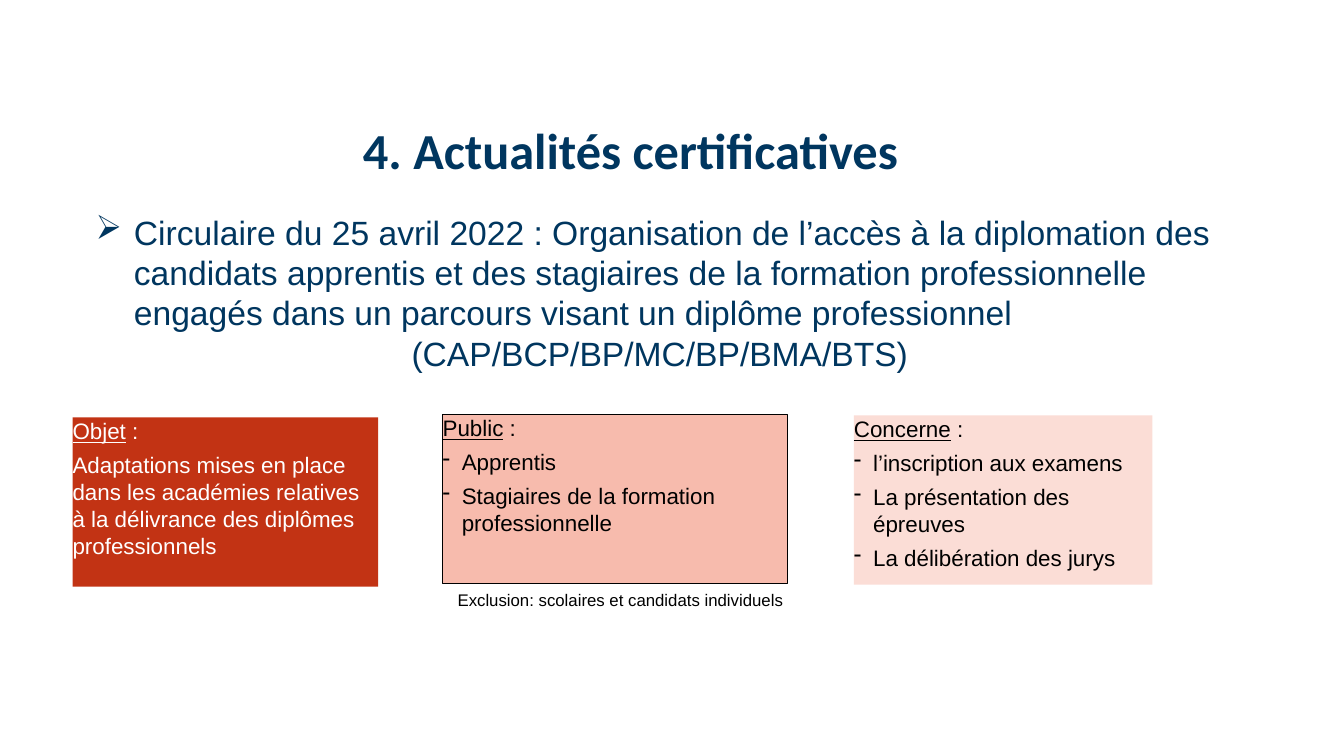
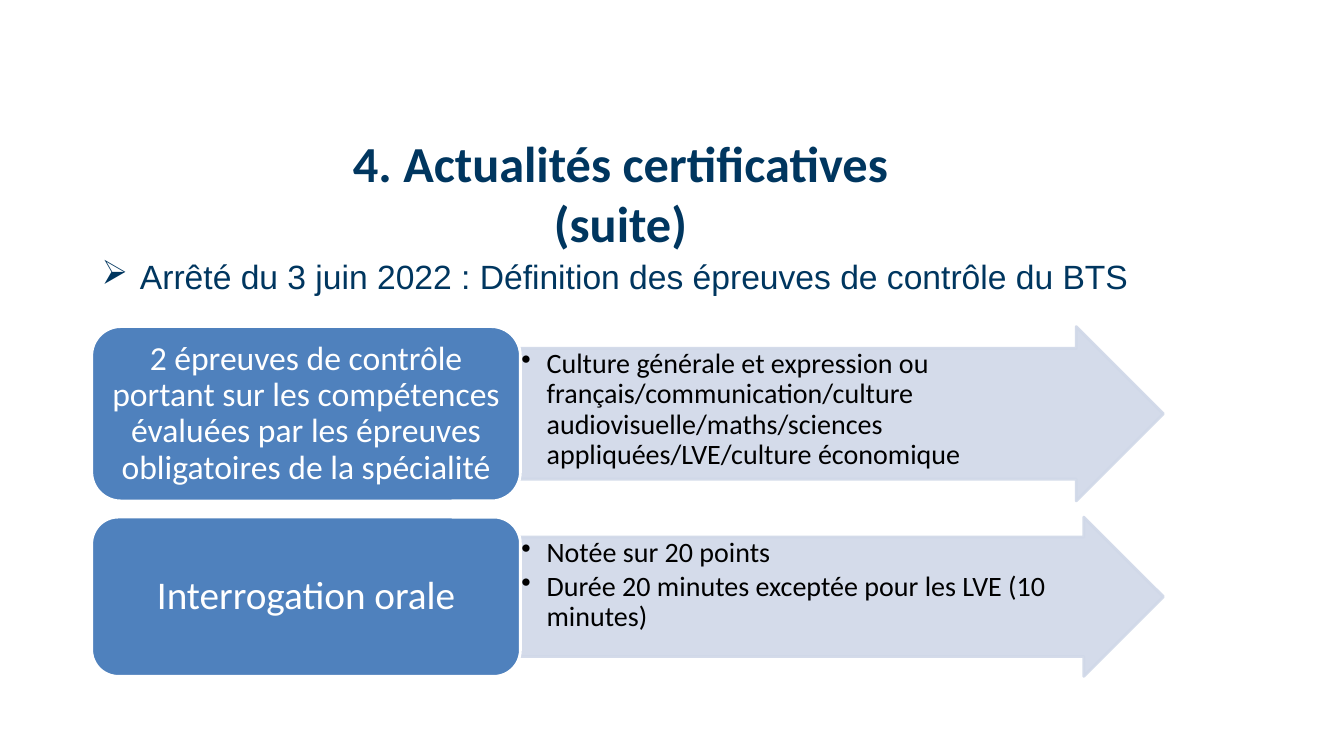
import pptx
import pptx.dml.color
import pptx.enum.shapes
import pptx.enum.text
import pptx.oxml.ns
import pptx.util
from lxml import etree

Inches = pptx.util.Inches
Pt = pptx.util.Pt
RGBColor = pptx.dml.color.RGBColor
SHAPE = pptx.enum.shapes.MSO_SHAPE
ALIGN = pptx.enum.text.PP_ALIGN
ANCHOR = pptx.enum.text.MSO_ANCHOR
qn = pptx.oxml.ns.qn

NAVY = RGBColor(0x00, 0x36, 0x5F)
BLACK = RGBColor(0x00, 0x00, 0x00)
WHITE = RGBColor(0xFF, 0xFF, 0xFF)
RED = RGBColor(0xC2, 0x33, 0x14)
SALMON = RGBColor(0xF7, 0xBB, 0xAD)
PALE_PINK = RGBColor(0xFB, 0xDD, 0xD6)
BLUE = RGBColor(0x4F, 0x81, 0xBD)
PALE_BLUE = RGBColor(0xD0, 0xD8, 0xE8)

TITLE = {"name": "Calibri", "size": Pt(36), "bold": True, "color": NAVY}
LEAD = {"name": "Arial", "size": Pt(24), "color": NAVY}
PANEL = {"name": "Arial", "size": Pt(16)}
NOTE = {"name": "Arial", "size": Pt(12), "color": BLACK}
DETAIL = {"name": "Calibri", "size": Pt(20), "color": BLACK}
HEADING = {"name": "Calibri", "color": WHITE}


def add_run(paragraph, text, style):
    run = paragraph.add_run()
    run.text = text
    for name, value in style.items():
        if name == "color":
            run.font.color.rgb = value
        else:
            setattr(run.font, name, value)


def set_bullet(paragraph, character, indent):
    properties = paragraph._p.get_or_add_pPr()
    properties.set("marL", str(Inches(indent)))
    properties.set("indent", str(-Inches(indent)))
    etree.SubElement(properties, qn("a:buChar")).set("char", character)


def write_paragraph(frame, text, style, bullet=None, **layout):
    """Fill the empty first paragraph or add one; bullet is (character, indent)."""
    first = frame.paragraphs[0]
    paragraph = frame.add_paragraph() if first.runs else first
    if bullet:
        set_bullet(paragraph, *bullet)
    for name, value in layout.items():
        setattr(paragraph, name, value)
    add_run(paragraph, text, style)
    return paragraph


def set_frame(frame, anchor=ANCHOR.TOP, insets=(0.1, 0.05)):
    horizontal, vertical = map(Inches, insets)
    settings = {
        "word_wrap": True,
        "auto_size": pptx.enum.text.MSO_AUTO_SIZE.NONE,
        "vertical_anchor": anchor,
        "margin_left": horizontal,
        "margin_right": horizontal,
        "margin_top": vertical,
        "margin_bottom": vertical,
    }
    for name, value in settings.items():
        setattr(frame, name, value)
    return frame


def add_text_box(slide, box):
    return set_frame(slide.shapes.add_textbox(*map(Inches, box)).text_frame)


def add_filled_shape(slide, kind, box, fill, line=None, line_width=2):
    shape = slide.shapes.add_shape(kind, *map(Inches, box))
    shape.shadow.inherit = False
    shape.fill.solid()
    shape.fill.fore_color.rgb = fill
    if line is None:
        shape.line.fill.background()
    else:
        shape.line.color.rgb = line
        shape.line.width = Pt(line_width)
    return shape


def add_titled_slide(presentation, title, box):
    slide = presentation.slides.add_slide(presentation.slide_layouts[5])
    placeholder = slide.shapes.title
    left, top, width, height = map(Inches, box)
    placeholder.left, placeholder.top = left, top
    placeholder.width, placeholder.height = width, height
    frame = set_frame(placeholder.text_frame)
    write_paragraph(frame, title, TITLE, alignment=ALIGN.CENTER)
    return slide


def add_lead(slide, box, text, centred_text=None):
    frame = add_text_box(slide, box)
    write_paragraph(frame, text, LEAD, ("➢", 0.38))
    if centred_text:
        write_paragraph(frame, centred_text, LEAD, alignment=ALIGN.CENTER)


def add_panel(slide, box, heading, items, fill, color, bullet=None, line=None):
    shape = add_filled_shape(slide, SHAPE.RECTANGLE, box, fill, line, 0.25)
    frame = set_frame(shape.text_frame, insets=(0, 0))
    style = {**PANEL, "color": color}
    layout = {"alignment": ALIGN.LEFT, "space_after": Pt(5)}
    paragraph = write_paragraph(frame, heading, {**style, "underline": True}, **layout)
    add_run(paragraph, " :", style)
    for item in items:
        write_paragraph(frame, item, style, bullet, **layout)


def add_arrow_row(slide, box, heading, heading_size, insets, details):
    """Rounded heading on the left 40 % of the box, arrow with details on the rest."""
    left, top, width, height = box
    split = 0.4 * width
    arrow_box = (left + split, top, width - split, height)
    arrow = add_filled_shape(slide, SHAPE.RIGHT_ARROW, arrow_box, PALE_BLUE, PALE_BLUE)
    arrow.adjustments[0] = 0.75
    arrow.adjustments[1] = 0.5
    for color in arrow._element.spPr.iter(qn("a:srgbClr")):
        etree.SubElement(color, qn("a:alpha")).set("val", "90000")
    frame = set_frame(arrow.text_frame, insets=(0.01, 0.01))
    for detail in details:
        write_paragraph(frame, detail, DETAIL, ("•", 0.25), alignment=ALIGN.LEFT,
                        line_spacing=0.9, space_after=Pt(3))

    card = add_filled_shape(slide, SHAPE.ROUNDED_RECTANGLE, (left, top, split, height),
                            BLUE, WHITE)
    frame = set_frame(card.text_frame, ANCHOR.MIDDLE, insets)
    write_paragraph(frame, heading, {**HEADING, "size": Pt(heading_size)},
                    alignment=ALIGN.CENTER, line_spacing=0.9)


def build_circular_slide(presentation):
    slide = add_titled_slide(presentation, "4. Actualités certificatives",
                             (1.52, 1.13, 9.47, 0.71))
    add_lead(slide, (0.85, 2.05, 11.39, 1.7),
             "Circulaire du 25 avril 2022 : Organisation de l’accès à la diplomation des "
             "candidats apprentis et des stagiaires de la formation professionnelle "
             "engagés dans un parcours visant un diplôme professionnel",
             "(CAP/BCP/BP/MC/BP/BMA/BTS)")
    dash = ("-", 0.19)
    height = 1.68
    add_panel(slide, (0.72, 4.14, 3.03, height), "Objet",
              ["Adaptations mises en place dans les académies relatives à la "
               "délivrance des diplômes professionnels"], RED, WHITE)
    add_panel(slide, (4.39, 4.11, 3.42, height), "Public",
              ["Apprentis", "Stagiaires de la formation professionnelle"],
              SALMON, BLACK, dash, BLACK)
    add_panel(slide, (8.47, 4.12, 2.96, height), "Concerne",
              ["l’inscription aux examens", "La présentation des épreuves",
               "La délibération des jurys"], PALE_PINK, BLACK, dash)
    note = add_text_box(slide, (4.44, 5.8, 3.57, 0.3))
    write_paragraph(note, "Exclusion: scolaires et candidats individuels", NOTE)


def build_exam_slide(presentation):
    slide = add_titled_slide(presentation, "4. Actualités certificatives (suite)",
                             (2.77, 1.26, 6.77, 0.71))
    add_lead(slide, (0.91, 2.49, 11.68, 0.5),
             "Arrêté du 3 juin 2022 : Définition des épreuves de contrôle du BTS")
    left, width = 0.91, 10.63
    add_arrow_row(slide, (left, 3.24, width, 1.73),
                  "2 épreuves de contrôle portant sur les compétences évaluées par "
                  "les épreuves obligatoires de la spécialité", 24, (0.1, 0.05),
                  ["Culture générale et expression ou français/communication/culture "
                   "audiovisuelle/maths/sciences appliquées/LVE/culture économique"])
    add_arrow_row(slide, (left, 5.13, width, 1.58), "Interrogation orale", 28, (0.12, 0.06),
                  ["Notée sur 20 points",
                   "Durée 20 minutes exceptée pour les LVE (10 minutes)"])


def main():
    presentation = pptx.Presentation()
    presentation.slide_width = Inches(13.33)
    presentation.slide_height = Inches(7.5)
    build_circular_slide(presentation)
    build_exam_slide(presentation)
    presentation.save("out.pptx")


if __name__ == "__main__":
    main()
